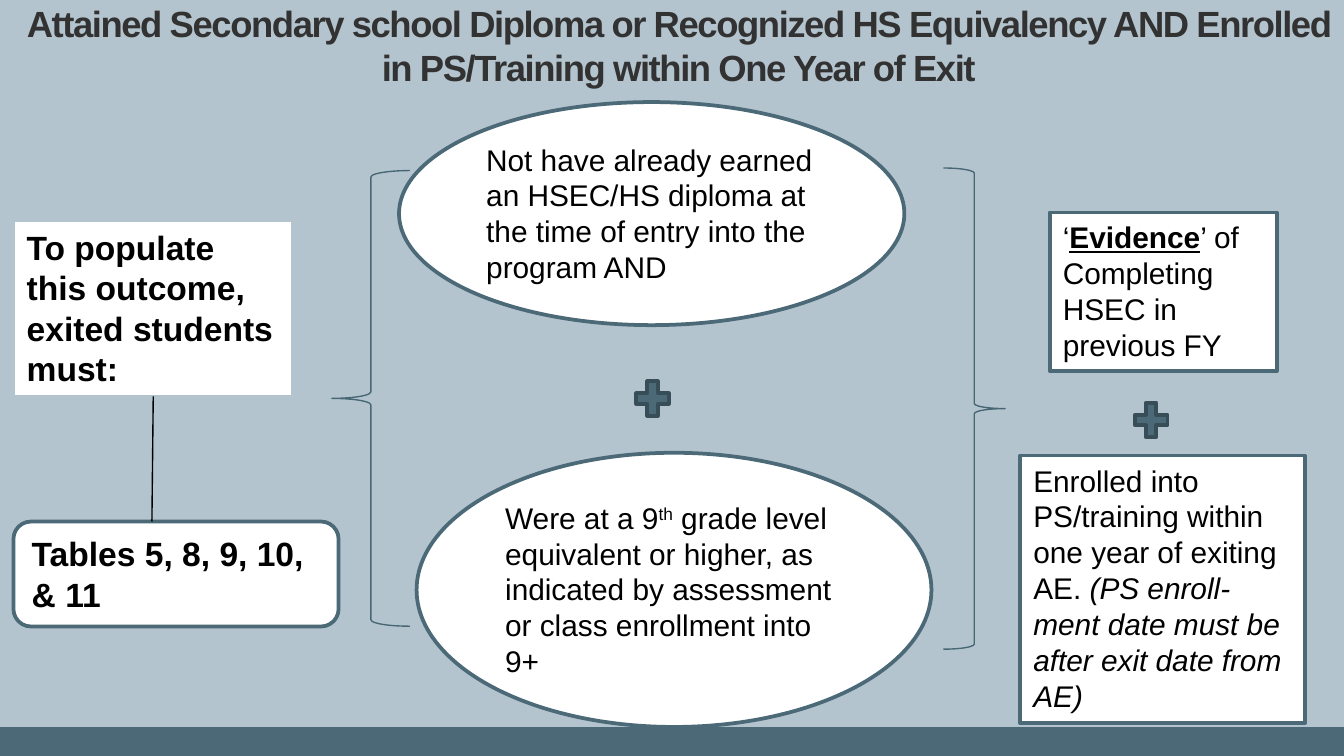
from lxml.etree import SubElement
from pptx import Presentation
from pptx.dml.color import RGBColor
from pptx.enum.shapes import MSO_CONNECTOR, MSO_SHAPE
from pptx.enum.text import MSO_ANCHOR, PP_ALIGN
from pptx.oxml.ns import qn
from pptx.util import Pt

WIDTH, HEIGHT = 720, 405
BACKGROUND, TEAL, DARK_TEAL, BRACE = "B4C4CE", "4B6977", "374E58", "486775"
WHITE, BLACK, CHARCOAL = "FFFFFF", "000000", "323232"

TITLE = ("Attained Secondary school Diploma or Recognized HS Equivalency AND "
         "Enrolled in PS/Training within One Year of Exit")
TITLE_PLACE = (7.2, -6.5, 712.8, 61.2)

# name: (preset, (left, top, width, height), line colour, text size, runs)
BOXES = {
    "outcome": (MSO_SHAPE.RECTANGLE, (7.2, 118.1, 149.8, 94.3), BACKGROUND, 18,
                [("To populate this outcome, exited students must:", "bold")]),
    "tables": (MSO_SHAPE.FLOWCHART_ALTERNATE_PROCESS, (7.2, 279.4, 174.2, 56.2), TEAL, 18,
               [("Tables 5, 8, 9, 10, & 11", "bold")]),
    "no diploma": (MSO_SHAPE.OVAL, (213.8, 54.7, 270.7, 119.5), TEAL, 16,
                   [("Not have already earned an HSEC/HS diploma at the time of "
                     "entry into the program AND", "")]),
    "grade level": (MSO_SHAPE.OVAL, (223.2, 242.6, 275.8, 146.9), TEAL, 16,
                    [("Were at a 9", ""), ("th", "superscript"),
                     (" grade level equivalent or higher, as indicated by assessment "
                      "or class enrollment into 9+", "")]),
    "evidence": (MSO_SHAPE.RECTANGLE, (562.3, 113.8, 121.7, 85), TEAL, 16,
                 [("‘", ""), ("Evidence", "bold underline"),
                  ("’ of Completing HSEC in previous FY", "")]),
    "enrolled": (MSO_SHAPE.RECTANGLE, (546.5, 244.1, 152.6, 143.3), TEAL, 16,
                 [("Enrolled into PS/training within one year of exiting AE. ", ""),
                  ("(PS enroll-ment date must be after exit date from AE)", "italic")]),
}
BRACES = [
    (MSO_SHAPE.LEFT_BRACE, (177.8, 91.4, 41.8, 244.1)),
    (MSO_SHAPE.RIGHT_BRACE, (505.4, 90, 33.1, 257.8)),
]
PLUS_SIZE = (23.8, 25.2)
PLUS_CORNERS = [(337.7, 200.9), (604.8, 212.4)]


def color(value):
    return RGBColor.from_string(value)


def add_outline(preset, place, fill, line, line_width):
    """Add a preset shape; None for fill or line leaves that part empty."""
    shape = page.shapes.add_shape(preset, *map(Pt, place))
    shape.shadow.inherit = False
    if fill:
        shape.fill.solid()
        shape.fill.fore_color.rgb = color(fill)
    else:
        shape.fill.background()
    if line:
        shape.line.color.rgb = color(line)
        shape.line.width = Pt(line_width)
    else:
        shape.line.fill.background()
    return shape


def write(box, runs, size, ink, align, anchor):
    frame = box.text_frame
    frame.word_wrap = True
    frame.vertical_anchor = anchor
    para = frame.paragraphs[0]
    para.alignment = align
    for text, style in runs:
        span = para.add_run()
        span.text = text
        font = span.font
        font.name, font.size = "Arial", Pt(size)
        font.color.rgb = color(ink)
        font.bold = "bold" in style
        font.italic = "italic" in style
        font.underline = "underline" in style
        if "superscript" in style:
            span._r.get_or_add_rPr().set("baseline", "30000")
        if "tight" in style:
            span._r.get_or_add_rPr().set("spc", "-80")


deck = Presentation()
deck.slide_width, deck.slide_height = Pt(WIDTH), Pt(HEIGHT)
page = deck.slides.add_slide(deck.slide_layouts[6])
page.background.fill.solid()
page.background.fill.fore_color.rgb = color(BACKGROUND)

add_outline(MSO_SHAPE.RECTANGLE, (0, 389.5, WIDTH, HEIGHT - 389.5), TEAL, None, 0)

boxes = {}
for name, (preset, place, line, size, runs) in BOXES.items():
    boxes[name] = add_outline(preset, place, WHITE, line, 2)
    write(boxes[name], runs, size, BLACK, PP_ALIGN.LEFT, MSO_ANCHOR.TOP)

for preset, place in BRACES:
    add_outline(preset, place, None, BRACE, 0.75)

for corner in PLUS_CORNERS:
    add_outline(MSO_SHAPE.MATH_PLUS, corner + PLUS_SIZE, TEAL, DARK_TEAL, 2)

title = page.shapes.add_textbox(*map(Pt, TITLE_PLACE))
write(title, [(TITLE, "bold tight")], 19.5, CHARCOAL, PP_ALIGN.CENTER, MSO_ANCHOR.MIDDLE)

link = page.shapes.add_connector(MSO_CONNECTOR.STRAIGHT, Pt(82.8), Pt(212.4), Pt(81.4), Pt(279.4))
link.begin_connect(boxes["outcome"], 2)
link.line.color.rgb = color(BLACK)
link.line.width = Pt(0.75)
SubElement(link._element.spPr, qn("a:effectLst"))

deck.save("out.pptx")
